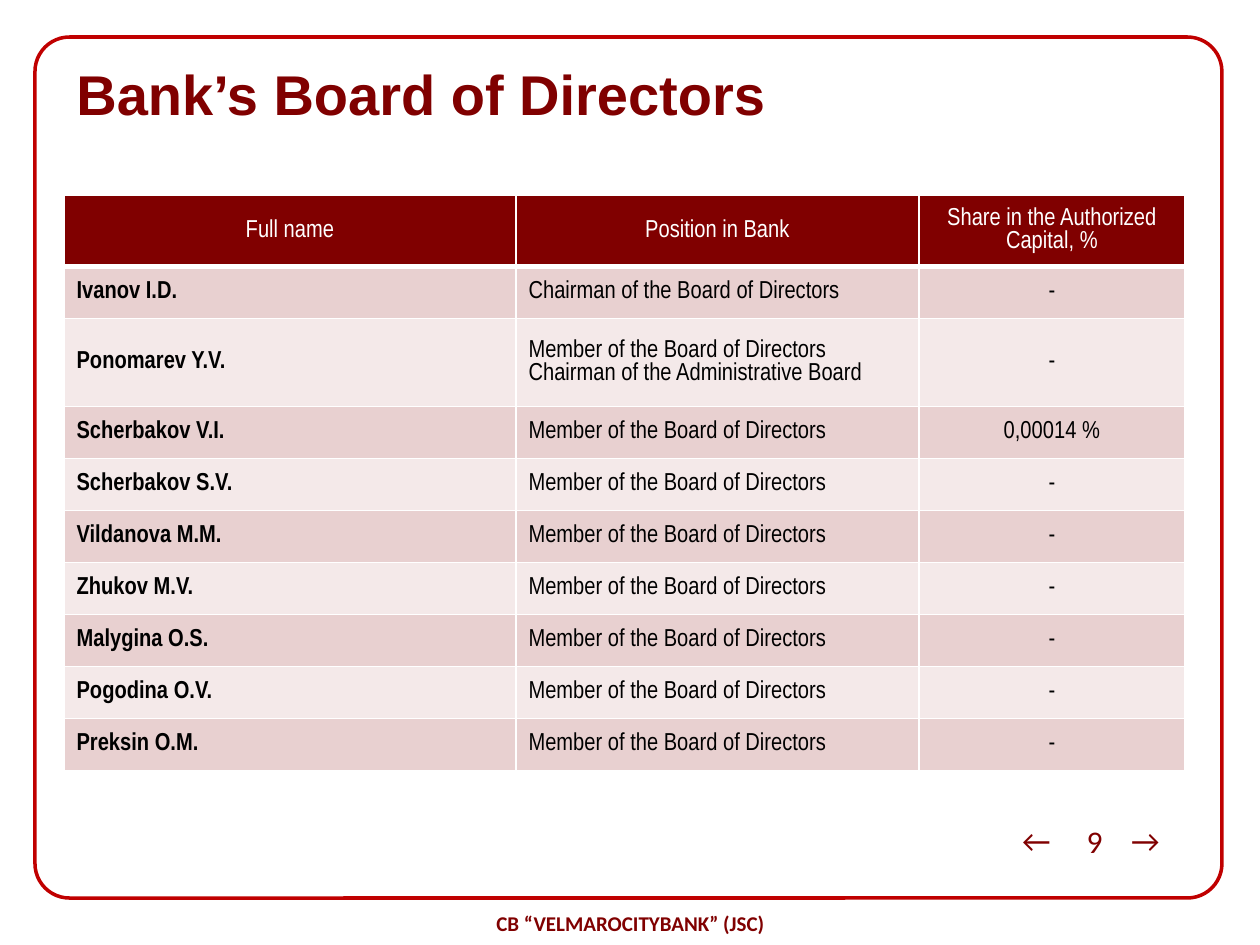
from lxml import etree
from pptx import Presentation
from pptx import util as u
from pptx.dml.color import RGBColor
from pptx.enum import shapes, text
from pptx.oxml import ns

MAROON = RGBColor(0x80, 0x00, 0x00)
RED = RGBColor(0xC0, 0x00, 0x00)
ROSE = RGBColor(0xE8, 0xD0, 0xD0)
PALE = RGBColor(0xF4, 0xE9, 0xE9)
WHITE = RGBColor(0xFF, 0xFF, 0xFF)
BLACK = RGBColor(0x00, 0x00, 0x00)
LEFT, MID = text.PP_ALIGN.LEFT, text.PP_ALIGN.CENTER
TOP, CENTER = text.MSO_ANCHOR.TOP, text.MSO_ANCHOR.MIDDLE
SCALE = 914400 / 126

HEAD = ("Full name", "Position in Bank", "Share in the Authorized Capital, %")
MEMBER = "Member of the Board of Directors"
BOARD = [
    ("Ivanov I.D.", "Chairman of the Board of Directors", "-"),
    ("Ponomarev Y.V.", MEMBER + " Chairman of the Administrative Board", "-"),
    ("Scherbakov V.I.", MEMBER, "0,00014 %"),
    ("Scherbakov S.V.", MEMBER, "-"),
    ("Vildanova M.M.", MEMBER, "-"),
    ("Zhukov M.V.", MEMBER, "-"),
    ("Malygina O.S.", MEMBER, "-"),
    ("Pogodina O.V.", MEMBER, "-"),
    ("Preksin O.M.", MEMBER, "-"),
]


def px(n):
    return u.Emu(round(n * SCALE))


class Deck:
    """Holds the style and the current slide, and draws each kind of element."""

    def __init__(self, wide, high):
        self.file = Presentation()
        self.file.slide_width, self.file.slide_height = px(wide), px(high)
        self.slide = self.file.slides.add_slide(self.file.slide_layouts[6])
        self.body = "Calibri"
        self.narrow = "Arial Narrow"

    def add_run(self, frame, words, size, font, color, bold, align):
        para = frame.paragraphs[0]
        para.alignment = align
        run = para.add_run()
        run.text = words
        run.font.size = u.Pt(size)
        run.font.name = font
        run.font.bold = bold
        run.font.color.rgb = color

    def frame(self, box, curve):
        shape = self.slide.shapes.add_shape(
            shapes.MSO_SHAPE.ROUNDED_RECTANGLE, *map(px, box))
        shape.adjustments[0] = curve
        shape.shadow.inherit = False
        shape.fill.background()
        shape.line.color.rgb = RED
        shape.line.width = u.Pt(2)

    def label(self, box, words, size=18, font=None, bold=False, align=MID, anchor=TOP):
        frame = self.slide.shapes.add_textbox(*map(px, box)).text_frame
        frame.word_wrap = True
        frame.vertical_anchor = anchor
        self.add_run(frame, words, size, font or self.body, MAROON, bold, align)

    def border(self, cell, base):
        props = cell._tc.get_or_add_tcPr()
        for side, width in (("L", 1), ("R", 1), ("T", 1), ("B", base)):
            line = etree.SubElement(props, ns.qn("a:ln" + side), w=str(u.Pt(width)))
            fill = etree.SubElement(line, ns.qn("a:solidFill"))
            etree.SubElement(fill, ns.qn("a:srgbClr"), val=str(WHITE))

    def cell(self, cell, words, fill, color, bold, align, base):
        cell.vertical_anchor = CENTER
        self.border(cell, base)
        cell.fill.solid()
        cell.fill.fore_color.rgb = fill
        self.add_run(cell.text_frame, words, 14, self.narrow, color, bold, align)

    def table(self, left, top, cols, rows, head, data):
        grid = self.slide.shapes.add_table(
            len(rows), len(cols), px(left), px(top), px(sum(cols)), px(sum(rows))).table
        for col, wide in zip(grid.columns, cols):
            col.width = px(wide)
        for row, high in zip(grid.rows, rows):
            row.height = px(high)
        for c, words in enumerate(head):
            self.cell(grid.cell(0, c), words, MAROON, WHITE, False, MID, 3)
        for r, line in enumerate(data, 1):
            fill = ROSE if r % 2 else PALE
            for c, words in enumerate(line):
                align = MID if c == 2 else LEFT
                self.cell(grid.cell(r, c), words, fill, BLACK, c == 0, align, 1)


def main():
    deck = Deck(1260, 945)
    deck.frame((35, 37, 1187, 861), 0.04)
    deck.label((1065, 816, 59, 50), "9")
    deck.label((64, 53, 912, 81), "Bank’s Board of Directors", 32, "Arial", True, LEFT)
    for left, arrow in ((1007, "←"), (1116, "→")):
        deck.label((left, 815, 59, 50), arrow)
    deck.label((431, 898, 399, 50), "CB “VELMAROCITYBANK” (JSC)", 12, bold=True, anchor=CENTER)
    deck.table(64, 195, (452, 403, 266), [71, 52, 88] + [52] * 7, HEAD, BOARD)
    deck.file.save("out.pptx")


if __name__ == "__main__":
    main()
